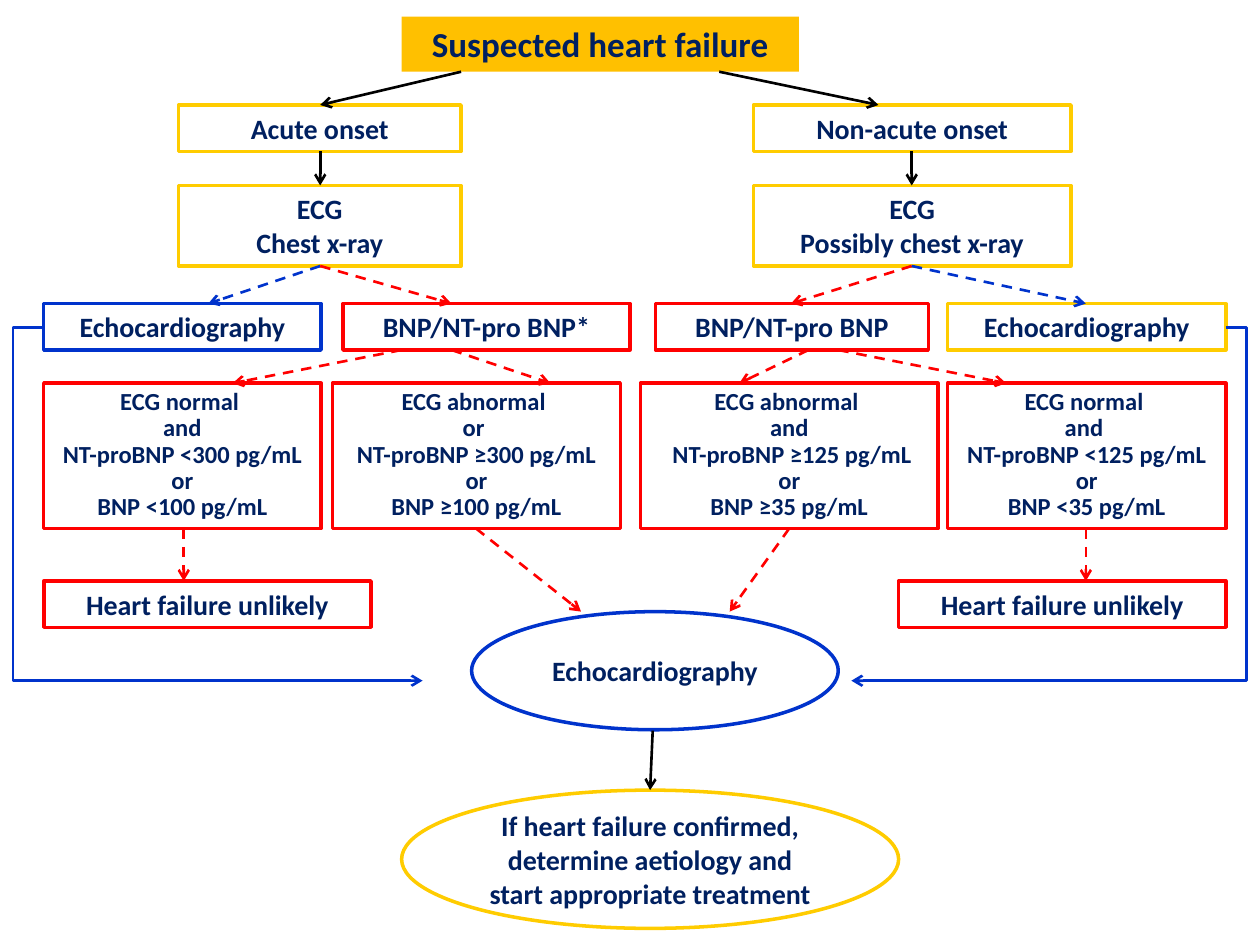
from lxml import etree
from pptx import Presentation
from pptx.dml.color import RGBColor
from pptx.enum import dml, shapes, text
from pptx.oxml import ns
from pptx.util import Pt

NAVY, GOLD, AMBER = "002060", "FFCC00", "FFC000"
BLUE, RED, BLACK = "0033CC", "FF0000", "000000"
RECTANGLE, OVAL = shapes.MSO_SHAPE.RECTANGLE, shapes.MSO_SHAPE.OVAL

TITLE = ("Suspected heart failure", (229.5, 9.5, 227, 31.5))

ROWS = [
    (60, 26.5, 16, [
        (102, 161.5, GOLD, "Acute onset"),
        (430.5, 181.5, GOLD, "Non-acute onset"),
    ]),
    (106, 46, 16, [
        (102, 161.5, GOLD, "ECG\nChest x-ray"),
        (430.5, 181.5, GOLD, "ECG\nPossibly chest x-ray"),
    ]),
    (173.5, 26.5, 16, [
        (25, 158.5, BLUE, "Echocardiography"),
        (196, 164, RED, "BNP/NT-pro BNP*"),
        (374.5, 156, RED, "BNP/NT-pro BNP"),
        (541.5, 159, GOLD, "Echocardiography"),
    ]),
    (219, 83, 14, [
        (25, 158.5, RED, "ECG normal \nand\nNT-proBNP <300 pg/mL\nor\nBNP <100 pg/mL"),
        (190, 164.5, RED, "ECG abnormal \nor \nNT-proBNP ≥300 pg/mL\nor\nBNP ≥100 pg/mL"),
        (366, 170, RED, "ECG abnormal \nand\n NT-proBNP ≥125 pg/mL\nor\nBNP ≥35 pg/mL"),
        (541.5, 159, RED, "ECG normal \nand \nNT-proBNP <125 pg/mL\nor\nBNP <35 pg/mL"),
    ]),
    (332, 26.5, 16, [
        (25, 187, RED, "Heart failure unlikely"),
        (513.5, 187, RED, "Heart failure unlikely"),
    ]),
]

OVALS = [
    ((269.5, 349.5, 209.5, 67.5), BLUE, "Echocardiography"),
    ((229.5, 451.5, 284, 79), GOLD,
     "If heart failure confirmed,\ndetermine aetiology and start appropriate treatment"),
]

ARROW_LEVELS = [
    (41, 60, [(263.5, 183, BLACK), (411, 502, BLACK)]),
    (86.5, 106, [(183, 183, BLACK), (521, 521, BLACK)]),
    (152, 173.5, [(183, 119, BLUE), (183, 258, RED), (521, 452, RED), (521, 620.5, BLUE)]),
    (200, 219, [(229.5, 133, RED), (258, 314.5, RED), (462, 422.5, RED), (479, 575, RED)]),
    (302, 332, [(105, 105, RED), (620.5, 620.5, RED)]),
    (302, 349.5, [(272, 332, RED), (451, 417, RED)]),
    (417.5, 451.5, [(373, 371.5, BLACK)]),
]

BYPASSES = [(25, 241.5, 7.5), (700.5, 486.5, 712.5)]
BYPASS_TOP, BYPASS_BOTTOM = 187, 389


def color(value):
    return RGBColor.from_string(value)


def write(shape, content, size, anchor, spacing=None):
    frame = shape.text_frame
    frame.text = content
    frame.word_wrap = True
    frame.auto_size = text.MSO_AUTO_SIZE.NONE
    frame.vertical_anchor = anchor
    for paragraph in frame.paragraphs:
        paragraph.alignment = text.PP_ALIGN.CENTER
        if spacing:
            paragraph.line_spacing = Pt(spacing)
        for run in paragraph.runs:
            run.font.name, run.font.size, run.font.bold = "Calibri", Pt(size), True
            run.font.color.rgb = color(NAVY)


def add_node(slide, kind, bounds, outline, content, size, anchor):
    shape = slide.shapes.add_shape(kind, *map(Pt, bounds))
    shape.shadow.inherit = False
    shape.fill.background()
    shape.line.color.rgb = color(outline)
    shape.line.width = Pt(2)
    write(shape, content, size, anchor, 15 if size == 14 else None)


def add_arrow(slide, kind, start, end, shade, dashed=False):
    connector = slide.shapes.add_connector(kind, *map(Pt, start + end))
    connector.line.color.rgb = color(shade)
    connector.line.width = Pt(1.5)
    if dashed:
        connector.line.dash_style = dml.MSO_LINE.DASH
    properties = connector._element.spPr
    line = properties.find(ns.qn("a:ln"))
    etree.SubElement(line, ns.qn("a:tailEnd"), type="arrow")
    etree.SubElement(properties, ns.qn("a:effectLst"))
    return connector


def add_bypass(slide, start_x, end_x, turn_x):
    connector = add_arrow(slide, shapes.MSO_CONNECTOR.ELBOW,
                          (start_x, BYPASS_TOP), (end_x, BYPASS_BOTTOM), BLUE)
    geometry = connector._element.spPr.find(ns.qn("a:prstGeom"))
    adjustments = geometry.find(ns.qn("a:avLst"))
    if adjustments is None:
        adjustments = etree.SubElement(geometry, ns.qn("a:avLst"))
    ratio = round((turn_x - start_x) / (end_x - start_x) * 100000)
    etree.SubElement(adjustments, ns.qn("a:gd"), name="adj1", fmla=f"val {ratio}")


def main():
    presentation = Presentation()
    presentation.slide_width, presentation.slide_height = Pt(720), Pt(540)
    slide = presentation.slides.add_slide(presentation.slide_layouts[5])

    title = slide.shapes.title
    content, bounds = TITLE
    title.left, title.top, title.width, title.height = map(Pt, bounds)
    title.fill.solid()
    title.fill.fore_color.rgb = color(AMBER)
    write(title, content, 20, text.MSO_ANCHOR.TOP)

    for top, height, size, boxes in ROWS:
        for left, width, outline, content in boxes:
            add_node(slide, RECTANGLE, (left, top, width, height), outline,
                     content, size, text.MSO_ANCHOR.TOP)
    for bounds, outline, content in OVALS:
        add_node(slide, OVAL, bounds, outline, content, 16, text.MSO_ANCHOR.MIDDLE)

    for top, bottom, arrows in ARROW_LEVELS:
        for start_x, end_x, shade in arrows:
            add_arrow(slide, shapes.MSO_CONNECTOR.STRAIGHT, (start_x, top),
                      (end_x, bottom), shade, dashed=shade != BLACK)
    for bypass in BYPASSES:
        add_bypass(slide, *bypass)

    presentation.save("out.pptx")


if __name__ == "__main__":
    main()
